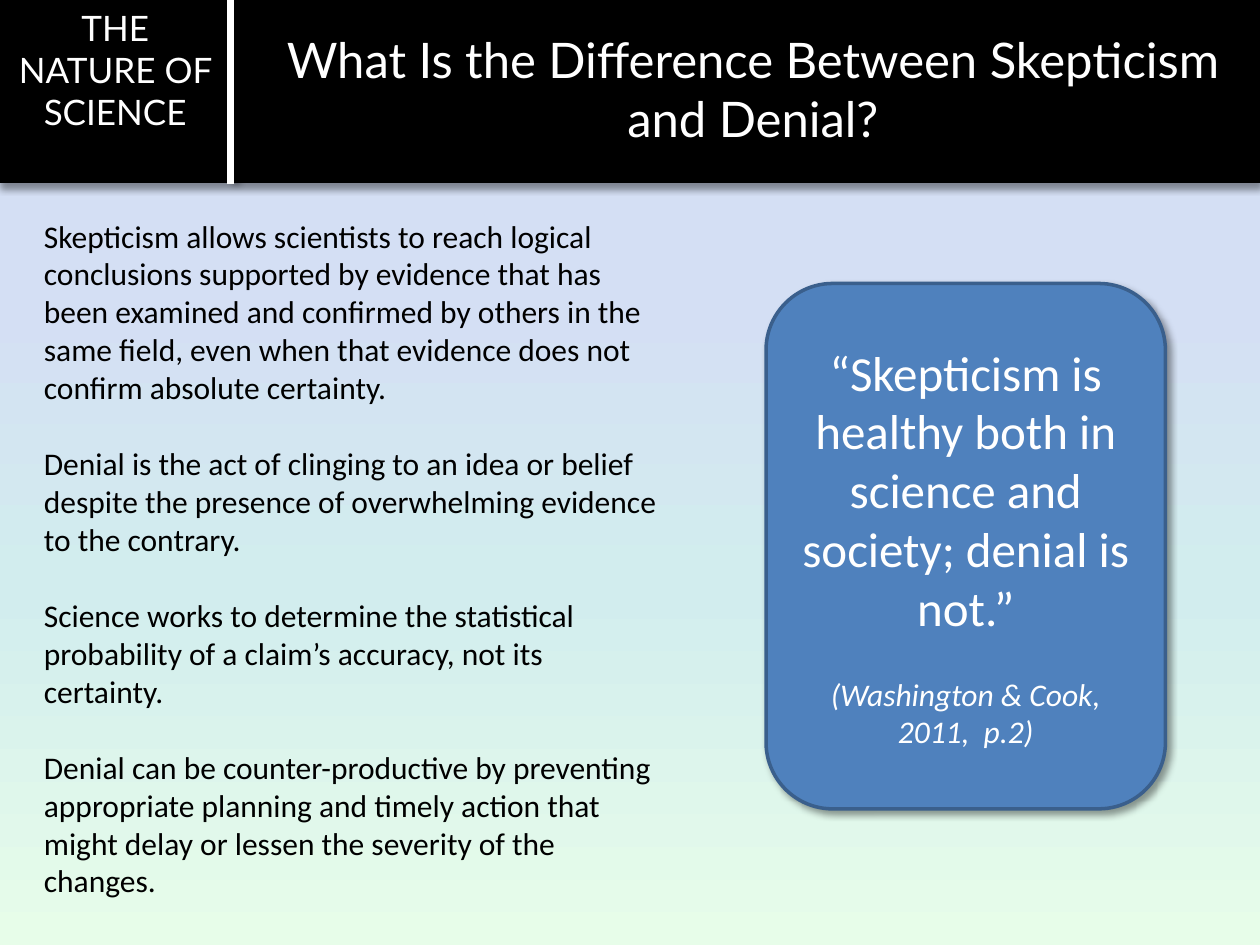
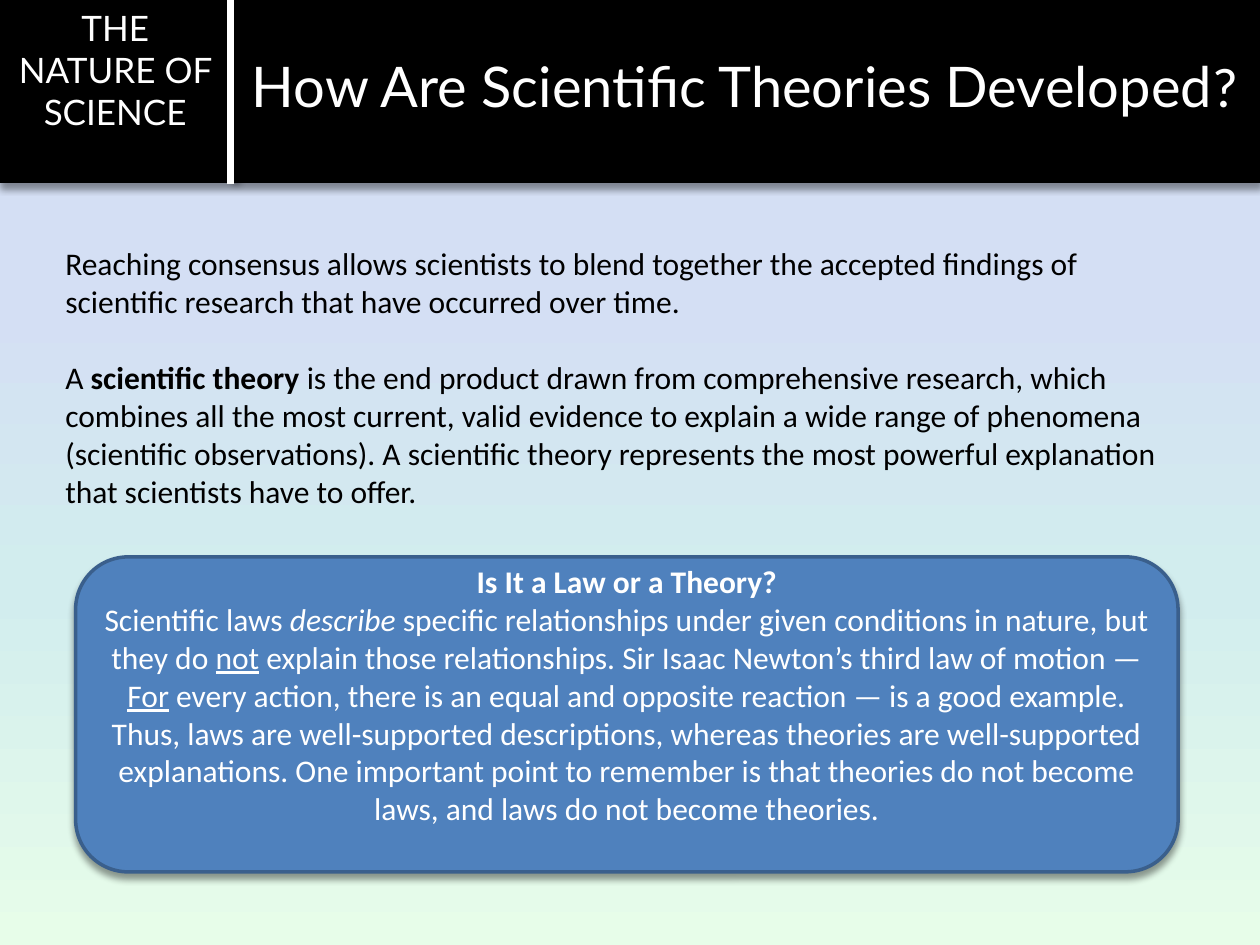
from lxml import etree
from pptx import Presentation
from pptx.dml.color import RGBColor
from pptx.enum.shapes import MSO_CONNECTOR, MSO_SHAPE
from pptx.enum.text import MSO_ANCHOR, PP_ALIGN
from pptx.oxml import parse_xml
from pptx.oxml.ns import nsdecls
from pptx.util import Inches, Pt

RECTANGLE = MSO_SHAPE.RECTANGLE
ROUNDED = MSO_SHAPE.ROUNDED_RECTANGLE
STRAIGHT = MSO_CONNECTOR.STRAIGHT
TOP, MIDDLE = MSO_ANCHOR.TOP, MSO_ANCHOR.MIDDLE
LEFT, CENTER = PP_ALIGN.LEFT, PP_ALIGN.CENTER

BLACK = RGBColor(0x00, 0x00, 0x00)
WHITE = RGBColor(0xFF, 0xFF, 0xFF)
PANEL_BLUE = RGBColor(0x4F, 0x81, 0xBD)
PANEL_EDGE = RGBColor(0x3A, 0x5F, 0x8C)
SKY_STOPS = [(32, RGBColor(0xD4, 0xDF, 0xF4)),
             (62, RGBColor(0xD2, 0xED, 0xEE)),
             (100, RGBColor(0xE7, 0xFD, 0xE9))]

HEADING_FONT, BODY_FONT = "Lato", "Calibri"
BODY_SIZE = 18
BODY_GAP = 22  # one body line, in points
DIVIDER_X = 1.83

# Each paragraph is a list of runs: (text, style, size, font),
# where style holds any of b (bold), i (italic), u (underline).
SLIDES = [
    {
        "title": [("What Is the Difference Between Skepticism and Denial?", "", 28, HEADING_FONT)],
        "title_box": (1.92, 0, 8.11, 1.4),
        "body_box": (0.25, 1.67, 5.08, 5.55),
        "body": [
            [("Skepticism allows scientists to reach logical conclusions supported by evidence "
              "that has been examined and confirmed by others in the same field, even when that "
              "evidence does not confirm absolute certainty.", "", BODY_SIZE, BODY_FONT)],
            [("Denial is the act of clinging to an idea or belief despite the presence of "
              "overwhelming evidence to the contrary.", "", BODY_SIZE, BODY_FONT)],
            [("Science works to determine the statistical probability of a claim’s accuracy, "
              "not its certainty.", "", BODY_SIZE, BODY_FONT)],
            [("Denial can be counter-productive by preventing appropriate planning and timely "
              "action that might delay or lessen the severity of the changes.",
              "", BODY_SIZE, BODY_FONT)],
        ],
        "panel_box": (6.08, 2.25, 3.17, 4.17),
        "panel_shadow": 45,
        "panel_gap": BODY_GAP,
        "panel_bottom": 0.05,
        "panel": [
            [("“Skepticism is healthy both in science and society; denial is not.”",
              "", 28, BODY_FONT)],
            [("(Washington & Cook, 2011,  p.2)", "i", BODY_SIZE, BODY_FONT)],
        ],
    },
    {
        "title": [("How Are Scientific Theories Developed", "", 32, HEADING_FONT),
                  ("?", "", 32, BODY_FONT)],
        "title_box": (DIVIDER_X, 0, 8.17, 1.35),
        "body_box": (0.42, 1.89, 9.17, 2.52),
        "body": [
            [("Reaching consensus allows scientists to blend together the accepted findings of "
              "scientific research that have occurred over time.", "", BODY_SIZE, BODY_FONT)],
            [("A ", "", BODY_SIZE, BODY_FONT),
             ("scientific theory", "b", BODY_SIZE, BODY_FONT),
             (" is the end product drawn from comprehensive research, which combines all the "
              "most current, valid evidence to explain a wide range of phenomena (scientific "
              "observations). A scientific theory represents the most powerful explanation that "
              "scientists have to offer.", "", BODY_SIZE, BODY_FONT)],
        ],
        "panel_box": (0.6, 4.42, 8.75, 2.5),
        "panel_shadow": 90,
        "panel_gap": 0,
        "panel_bottom": 0.36,
        "panel": [
            [("Is It a Law or a Theory?", "b", BODY_SIZE, BODY_FONT)],
            [("Scientific laws ", "", BODY_SIZE, BODY_FONT),
             ("describe", "i", BODY_SIZE, BODY_FONT),
             (" specific relationships under given conditions in nature, but they do ",
              "", BODY_SIZE, BODY_FONT),
             ("not", "u", BODY_SIZE, BODY_FONT),
             (" explain those relationships. Sir Isaac Newton’s third law of motion — ",
              "", BODY_SIZE, BODY_FONT),
             ("For", "u", BODY_SIZE, BODY_FONT),
             (" every action, there is an equal and opposite reaction — is a good example. Thus, "
              "laws are well-supported descriptions, whereas theories are well-supported "
              "explanations. One important point to remember is that theories do not become "
              "laws, and laws do not become theories.", "", BODY_SIZE, BODY_FONT)],
        ],
    },
]


def write_text(shape, paragraphs, color, align, anchor, gap=0):
    frame = shape.text_frame
    frame.word_wrap = True
    frame.vertical_anchor = anchor
    for index, runs in enumerate(paragraphs):
        paragraph = frame.add_paragraph() if index else frame.paragraphs[0]
        paragraph.alignment = align
        paragraph.space_before = Pt(gap if index else 0)
        for text, style, size, font in runs:
            run = paragraph.add_run()
            run.text = text
            run.font.name = font
            run.font.size = Pt(size)
            run.font.color.rgb = color
            run.font.bold = "b" in style
            run.font.italic = "i" in style
            run.font.underline = "u" in style


def cast_shadow(shape, angle):
    """Give a filled and outlined shape a soft shadow falling at angle degrees."""
    shape.element.spPr.append(parse_xml(
        f'<a:effectLst {nsdecls("a")}><a:outerShdw blurRad="{Pt(4)}" dist="{Pt(3)}" '
        f'dir="{angle * 60000}" algn="tl" rotWithShape="0"><a:srgbClr val="{BLACK}">'
        '<a:alpha val="40000"/></a:srgbClr></a:outerShdw></a:effectLst>'))


prs = Presentation()
prs.slide_width, prs.slide_height = Inches(10), Inches(7.5)
blank_layout = prs.slide_layouts[6]

# Sky gradient, shared through the master
master = prs.slide_master
master.background.fill.gradient()
gradient = master.element.xpath("./p:cSld/p:bg/p:bgPr/a:gradFill")[0]
stops = "".join(f'<a:gs pos="{position * 1000}"><a:srgbClr val="{color}"/></a:gs>'
                for position, color in SKY_STOPS)
sky = parse_xml(f'<a:gradFill {nsdecls("a")} rotWithShape="1"><a:gsLst>{stops}</a:gsLst>'
                '<a:lin ang="5400000" scaled="0"/></a:gradFill>')
gradient.getparent().replace(gradient, sky)
etree.cleanup_namespaces(sky)

for content in SLIDES:
    slide = prs.slides.add_slide(blank_layout)
    shapes = slide.shapes

    # Header band
    band = shapes.add_shape(RECTANGLE, 0, 0, prs.slide_width, Inches(1.44))
    band.fill.solid()
    band.fill.fore_color.rgb = BLACK
    band.line.color.rgb = BLACK
    band.line.width = Pt(2)
    cast_shadow(band, 90)

    title = shapes.add_textbox(*map(Inches, content["title_box"]))
    write_text(title, [content["title"]], WHITE, CENTER, MIDDLE)

    # Main text
    body = shapes.add_textbox(*map(Inches, content["body_box"]))
    write_text(body, content["body"], BLACK, LEFT, TOP, BODY_GAP)

    # Highlight panel
    panel = shapes.add_shape(ROUNDED, *map(Inches, content["panel_box"]))
    panel.fill.solid()
    panel.fill.fore_color.rgb = PANEL_BLUE
    panel.line.color.rgb = PANEL_EDGE
    panel.line.width = Pt(2)
    cast_shadow(panel, content["panel_shadow"])
    panel.text_frame.margin_bottom = Inches(content["panel_bottom"])
    write_text(panel, content["panel"], WHITE, CENTER, MIDDLE, content["panel_gap"])

    # Section label and its divider
    divider = shapes.add_connector(STRAIGHT, Inches(DIVIDER_X), Inches(-0.06),
                                   Inches(DIVIDER_X), Inches(1.46))
    divider.line.color.rgb = WHITE
    divider.line.width = Pt(4)
    cast_shadow(divider, 0)

    section = shapes.add_textbox(0, 0, Inches(DIVIDER_X), Inches(1.45))
    write_text(section, [[("THE NATURE OF SCIENCE", "", 20, HEADING_FONT)]], WHITE, CENTER, TOP)

prs.save("out.pptx")
